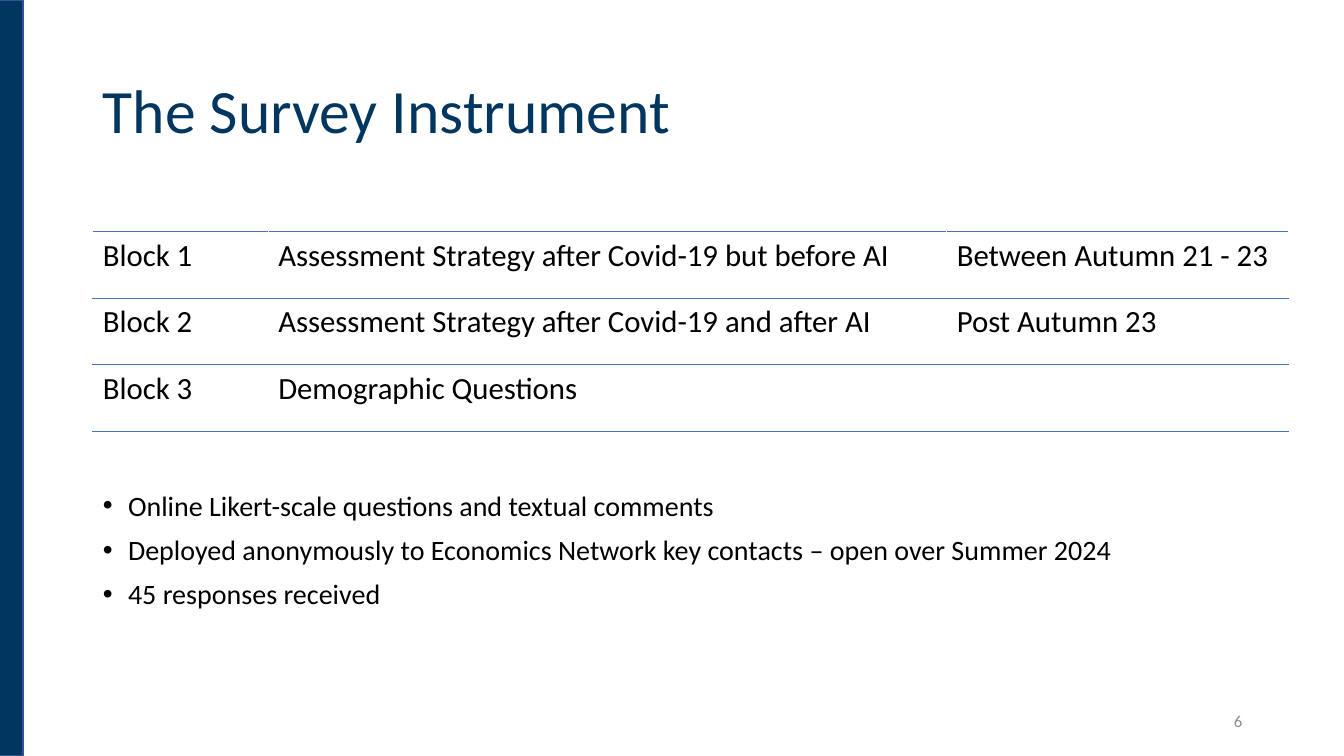
from dataclasses import dataclass

from lxml.etree import SubElement
from pptx import Presentation
from pptx.dml.color import RGBColor
from pptx.enum.shapes import MSO_SHAPE
from pptx.enum.text import MSO_ANCHOR, MSO_AUTO_SIZE, PP_ALIGN
from pptx.oxml import parse_xml
from pptx.oxml.ns import nsdecls, qn
from pptx.util import Inches, Pt


@dataclass(frozen=True)
class Theme:
    font: str = "Calibri"
    navy: str = "00365F"
    edge: str = "325491"
    rule: str = "4472C4"
    ink: str = "000000"
    gray: str = "8C8C8C"
    title: int = 44
    cell: int = 22
    body: int = 20
    number: int = 12


@dataclass(frozen=True)
class Box:
    left: float
    top: float
    width: float
    height: float

    def spans(self) -> list:
        return [Inches(v) for v in (self.left, self.top, self.width, self.height)]


@dataclass(frozen=True)
class Block:
    name: str
    topic: str
    period: str = ""


THEME = Theme()
BLOCKS = [
    Block("Block 1", "Assessment Strategy after Covid-19 but before AI", "Between Autumn 21 - 23"),
    Block("Block 2", "Assessment Strategy after Covid-19 and after AI", "Post Autumn 23"),
    Block("Block 3", "Demographic Questions"),
]
WIDTHS = [1.74, 6.73, 3.39]
POINTS = [
    "Online Likert-scale questions and textual comments",
    "Deployed anonymously to Economics Network key contacts – open over Summer 2024",
    "45 responses received",
]


def style(para, size: int, color: str) -> None:
    para.font.name = THEME.font
    para.font.size = Pt(size)
    para.font.color.rgb = RGBColor.from_string(color)


def place(shape, box: Box) -> None:
    shape.left, shape.top, shape.width, shape.height = box.spans()


def draw_band(slide, box: Box) -> None:
    band = slide.shapes.add_shape(MSO_SHAPE.RECTANGLE, *box.spans())
    band.shadow.inherit = False
    band.fill.solid()
    band.fill.fore_color.rgb = RGBColor.from_string(THEME.navy)
    band.line.color.rgb = RGBColor.from_string(THEME.edge)
    band.line.width = Pt(1)


def draw_title(slide, box: Box, text: str) -> None:
    title = slide.shapes.title
    place(title, box)
    frame = title.text_frame
    frame.text = text
    frame.vertical_anchor = MSO_ANCHOR.MIDDLE
    frame.auto_size = MSO_AUTO_SIZE.NONE
    para = frame.paragraphs[0]
    para.alignment = PP_ALIGN.LEFT
    para.line_spacing = 0.9
    style(para, THEME.title, THEME.navy)


def rule_cell(cell) -> None:
    cell.fill.background()
    props = cell._tc.get_or_add_tcPr()
    for index, side in enumerate(("lnT", "lnB")):
        props.insert(index, parse_xml(
            f'<a:{side} {nsdecls("a")} w="{Pt(1)}"><a:solidFill>'
            f'<a:srgbClr val="{THEME.rule}"/></a:solidFill></a:{side}>'
        ))


def draw_table(slide, box: Box, blocks: list[Block]) -> None:
    table = slide.shapes.add_table(len(blocks), len(WIDTHS), *box.spans()).table
    table.first_row = table.horz_banding = False
    for column, width in zip(table.columns, WIDTHS):
        column.width = Inches(width)
    for row, block in zip(table.rows, blocks):
        for cell, text in zip(row.cells, (block.name, block.topic, block.period)):
            cell.text = text
            style(cell.text_frame.paragraphs[0], THEME.cell, THEME.ink)
            rule_cell(cell)


def draw_list(slide, box: Box, points: list[str]) -> None:
    body = slide.placeholders[1]
    place(body, box)
    frame = body.text_frame
    frame.text = "\n".join(points)
    frame.auto_size = MSO_AUTO_SIZE.NONE
    for index, para in enumerate(frame.paragraphs):
        para.line_spacing = 0.9
        para.space_before = Pt(10 if index else 0)
        props = para._p.get_or_add_pPr()
        props.set("marL", str(Inches(0.25)))
        props.set("indent", str(Inches(-0.25)))
        SubElement(props, qn("a:buFont")).set("typeface", "Arial")
        SubElement(props, qn("a:buChar")).set("char", "•")
        style(para, THEME.body, THEME.ink)


def draw_number(slide, box: Box, text: str) -> None:
    frame = slide.shapes.add_textbox(*box.spans()).text_frame
    frame.word_wrap = True
    frame.vertical_anchor = MSO_ANCHOR.MIDDLE
    frame.text = text
    para = frame.paragraphs[0]
    para.alignment = PP_ALIGN.RIGHT
    style(para, THEME.number, THEME.gray)


def main() -> None:
    deck = Presentation()
    deck.slide_width, deck.slide_height = Inches(13.33), Inches(7.5)
    slide = deck.slides.add_slide(deck.slide_layouts[1])
    draw_band(slide, Box(-0.04, 0, 0.27, 7.5))
    draw_title(slide, Box(0.92, 0.4, 11.5, 1.45), "The Survey Instrument")
    draw_table(slide, Box(0.92, 2.3, sum(WIDTHS), 1.98), BLOCKS)
    draw_number(slide, Box(9.42, 6.95, 3, 0.4), "6")
    draw_list(slide, Box(0.92, 4.83, 11.5, 1.92), POINTS)
    deck.save("out.pptx")


if __name__ == "__main__":
    main()
